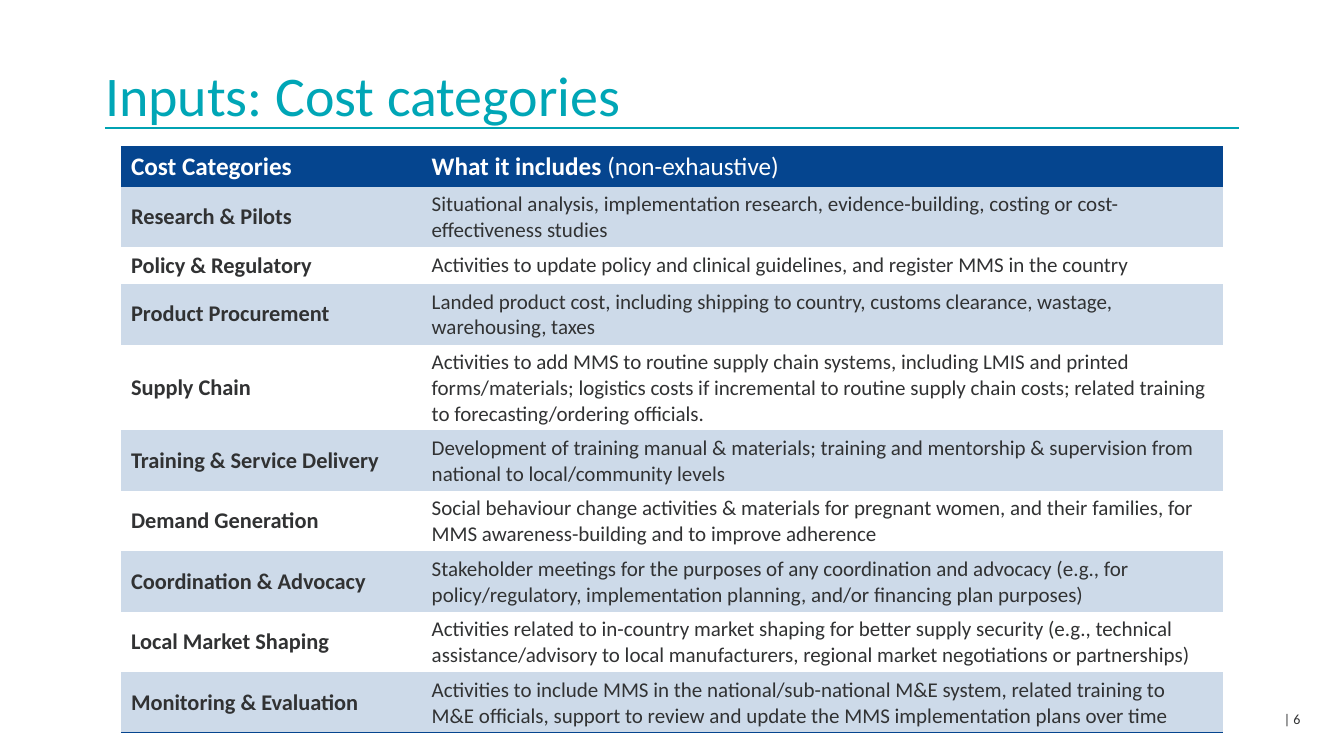
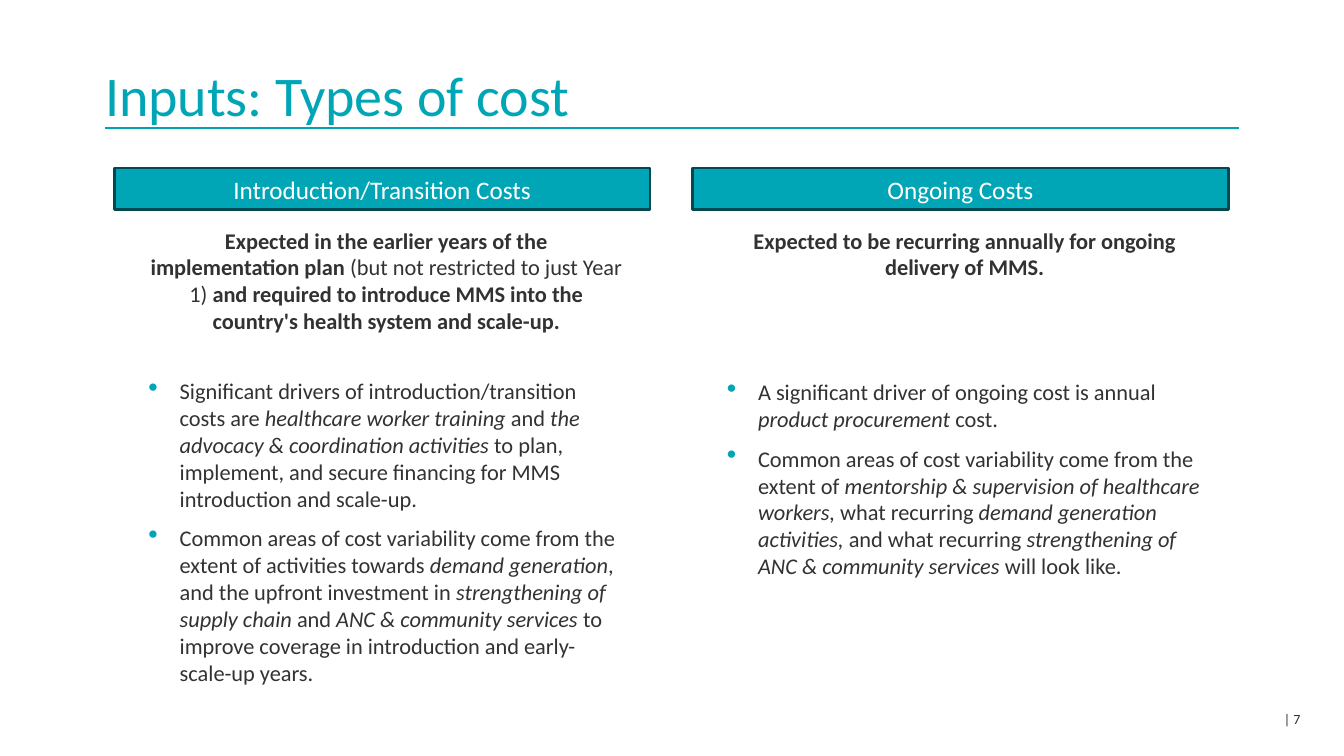
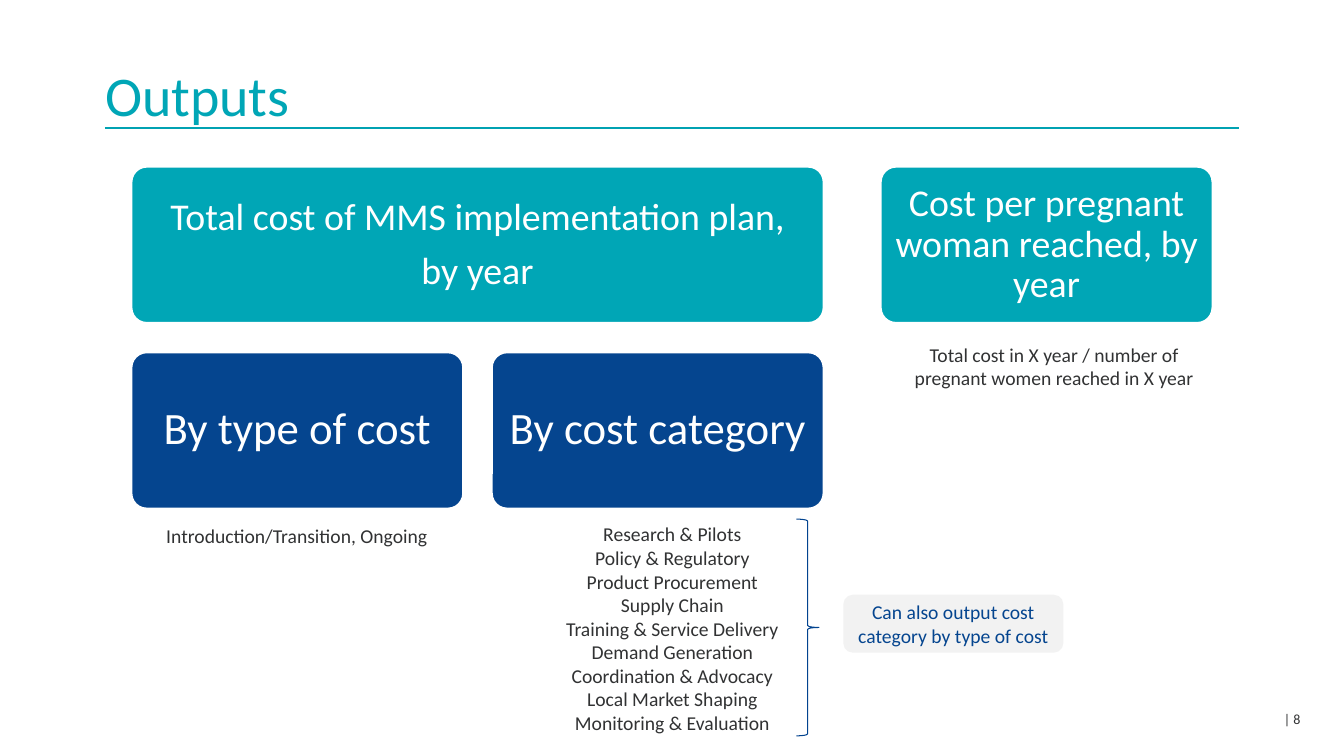
"""Build three slides on the inputs and outputs of a costing plan."""

from dataclasses import dataclass
from typing import NamedTuple

from lxml.etree import SubElement
from pptx import Presentation
from pptx.dml.color import RGBColor
from pptx.enum.shapes import MSO_CONNECTOR as Connector, MSO_SHAPE as Preset
from pptx.enum.text import MSO_ANCHOR as Anchor, PP_ALIGN as Align
from pptx.oxml.ns import qn
from pptx.util import Emu, Inches, Pt

COLUMNS, ROWS = 160, 90
CELL = Inches(1) // 12
FIRST_PAGE = 6
PLAIN_TABLE = "{2D5ABB26-0587-4C30-8999-92F81FD0307C}"


@dataclass(frozen=True)
class Theme:
    font: str = "Calibri"
    teal: str = "00A6B6"
    rule: str = "00A2B2"
    dark_teal: str = "004950"
    navy: str = "05458F"
    brace: str = "02438F"
    band: str = "CDDAE9"
    pale: str = "F2F2F2"
    ink: str = "313233"
    white: str = "FFFFFF"
    title: int = 40
    big_card: int = 32
    card: int = 27
    header: int = 18
    body: int = 16
    detail: int = 15
    caption: int = 14
    footer: int = 10


THEME = Theme()


class Box(NamedTuple):
    """A place in grid columns and rows."""

    left: float
    top: float
    width: float
    height: float

    def lengths(self) -> list[Emu]:
        return [grid(value) for value in self]


class Category(NamedTuple):
    name: str
    includes: str
    minimum_rows: float


class CostType(NamedTuple):
    name: str
    summary: str
    gap: float
    drivers: tuple[str, ...]


class Card(NamedTuple):
    column: int
    row: int
    span: int
    color: str
    size: int
    lines: tuple[str, ...]


class Caption(NamedTuple):
    box: Box
    lines: tuple[str, ...]


CATEGORIES = (
    Category("Research & Pilots", "Situational analysis, implementation research, evidence-building, costing or "
             "cost-effectiveness studies", 5.6),
    Category("Policy & Regulatory", "Activities to update policy and clinical guidelines, and register MMS in the "
             "country", 3.5),
    Category("Product Procurement", "Landed product cost, including shipping to country, customs clearance, wastage, "
             "warehousing, taxes", 5.6),
    Category("Supply Chain", "Activities to add MMS to routine supply chain systems, including LMIS and printed "
             "forms/materials; logistics costs if incremental to routine supply chain costs; related training to "
             "forecasting/ordering officials.", 8),
    Category("Training & Service Delivery", "Development of training manual & materials; training and mentorship & "
             "supervision from national to local/community levels", 5.6),
    Category("Demand Generation", "Social behaviour change activities & materials for pregnant women, and their "
             "families, for MMS awareness-building and to improve adherence", 5.6),
    Category("Coordination & Advocacy", "Stakeholder meetings for the purposes of any coordination and advocacy "
             "(e.g., for policy/regulatory, implementation planning, and/or financing plan purposes)", 5.6),
    Category("Local Market Shaping", "Activities related to in-country market shaping for better supply security "
             "(e.g., technical assistance/advisory to local manufacturers, regional market negotiations or "
             "partnerships)", 5.6),
    Category("Monitoring & Evaluation", "Activities to include MMS in the national/sub-national M&E system, related "
             "training to M&E officials, support to review and update the MMS implementation plans over time", 5.6),
)

COST_TYPES = (
    CostType(
        "Introduction/Transition Costs",
        "*Expected in the earlier years of the implementation plan *(but not restricted to just Year 1) "
        "*and required to introduce MMS into the country's health system and scale-up.*",
        31,
        ("Significant drivers of introduction/transition costs are *healthcare worker training *and *the advocacy & "
         "coordination activities* to plan, implement, and secure financing for MMS introduction and scale-up.",
         "Common areas of cost variability come from the extent of activities towards *demand generation*, and the "
         "upfront investment in *strengthening of supply chain *and* ANC & community services* to improve coverage "
         "in introduction and early-scale-up years."),
    ),
    CostType(
        "Ongoing Costs",
        "*Expected to be recurring annually for ongoing delivery of MMS.*",
        70,
        ("A significant driver of ongoing cost is annual *product procurement *cost.",
         "Common areas of cost variability come from the extent of *mentorship & supervision of healthcare workers, "
         "*what recurring *demand generation activities, *and what recurring *strengthening of ANC & community "
         "services* will look like."),
    ),
)

CARDS = (
    Card(0, 0, 2, THEME.teal, THEME.card, ("Total cost of MMS implementation plan,", "by year")),
    Card(0, 1, 1, THEME.navy, THEME.big_card, ("By type of cost",)),
    Card(1, 1, 1, THEME.navy, THEME.big_card, ("By cost category",)),
    Card(2, 0, 1, THEME.teal, THEME.card, ("Cost per pregnant woman reached, by year",)),
)

CAPTIONS = (
    Caption(Box(17.3, 61.8, 36.1, 4.1), ("Introduction/Transition, Ongoing",)),
    Caption(Box(106.5, 40.2, 38, 6.8), ("Total cost in X year / number of pregnant women reached in X year",)),
    Caption(Box(60.6, 61.6, 38.9, 29.5), tuple(category.name for category in CATEGORIES)),
)


def grid(count: float) -> Emu:
    """Turn a count of grid cells into a length."""
    return Emu(round(count * CELL))


def rgb(color: str) -> RGBColor:
    """Read a hexadecimal colour."""
    return RGBColor.from_string(color)


def add_bullet(paragraph) -> None:
    """Give a paragraph a hanging teal bullet."""
    properties = paragraph._p.get_or_add_pPr()
    indent = Inches(0.31)
    properties.set("marL", str(indent))
    properties.set("indent", str(-indent))
    color = SubElement(properties, qn("a:buClr"))
    SubElement(color, qn("a:srgbClr"), val=THEME.teal)
    SubElement(properties, qn("a:buSzPct"), val="125000")
    SubElement(properties, qn("a:buChar"), char="•")


def write(frame, text: str, *, size: int, color: str = THEME.ink, bold: bool = False, emphasis: str = "bold",
          align: Align = Align.LEFT, before: float = 0, after: float = 0, spacing: float = 1.0,
          bullet: bool = False) -> None:
    """Add a paragraph in which text between asterisks is emphasised."""
    first = frame.paragraphs[0]
    paragraph = frame.add_paragraph() if first.runs else first
    if bullet:
        add_bullet(paragraph)
    paragraph.alignment = align
    paragraph.space_before, paragraph.space_after = Pt(before), Pt(after)
    paragraph.line_spacing = spacing
    for index, piece in enumerate(text.split("*")):
        if not piece:
            continue
        run = paragraph.add_run()
        run.text = piece
        font = run.font
        font.name, font.size, font.bold = THEME.font, Pt(size), bold
        font.color.rgb = rgb(color)
        if index % 2:
            setattr(font, emphasis, True)


def add_text_box(slide, box: Box, anchor: Anchor = Anchor.TOP):
    """Add a wrapping text box and return its text frame."""
    frame = slide.shapes.add_textbox(*box.lengths()).text_frame
    frame.word_wrap = True
    frame.vertical_anchor = anchor
    return frame


def add_panel(slide, preset: Preset, box: Box, *, fill: str | None = None, line: str | None = None,
              width: float = 2, corner: float | None = None):
    """Add a flat preset shape and return its text frame."""
    shape = slide.shapes.add_shape(preset, *box.lengths())
    shape.shadow.inherit = False
    if corner is not None:
        shape.adjustments[0] = corner
    if fill:
        shape.fill.solid()
        shape.fill.fore_color.rgb = rgb(fill)
    else:
        shape.fill.background()
    if line:
        shape.line.color.rgb = rgb(line)
        shape.line.width = Pt(width)
    else:
        shape.line.fill.background()
    shape.text_frame.word_wrap = True
    shape.text_frame.vertical_anchor = Anchor.MIDDLE
    return shape.text_frame


def add_page(presentation, title: str):
    """Add a slide with its title, rule and page number."""
    slide = presentation.slides.add_slide(presentation.slide_layouts[6])
    page = FIRST_PAGE + len(presentation.slides) - 1
    footer = add_text_box(slide, Box(119.5, 82.4, 36.5, 4.8), Anchor.BOTTOM)
    write(footer, f"| {page}", size=THEME.footer, align=Align.RIGHT)
    rule = slide.shapes.add_connector(Connector.STRAIGHT, grid(12.5), grid(15.25), grid(147.5), grid(15.25))
    rule.line.color.rgb = rgb(THEME.rule)
    rule.line.width = Pt(1)
    SubElement(rule._element.spPr, qn("a:effectLst"))
    heading = add_text_box(slide, Box(12.5, 3.6, 135, 11.65), Anchor.BOTTOM)
    heading.margin_left = heading.margin_bottom = 0
    write(heading, title, size=THEME.title, color=THEME.teal)
    return slide


def format_cell(cell, text: str, *, fill: str | None, edges: tuple[str, ...] = (),
                anchor: Anchor = Anchor.MIDDLE, **style) -> None:
    """Set the borders, fill and text of a table cell."""
    properties = cell._tc.get_or_add_tcPr()
    for edge in edges:
        border = SubElement(properties, qn(f"a:{edge}"), w=str(Pt(1)))
        paint = SubElement(border, qn("a:solidFill"))
        SubElement(paint, qn("a:srgbClr"), val=THEME.navy)
    if fill:
        cell.fill.solid()
        cell.fill.fore_color.rgb = rgb(fill)
    else:
        cell.fill.background()
    cell.vertical_anchor = anchor
    write(cell.text_frame, text, **style)


def build_categories(presentation) -> None:
    """Draw the table of cost categories."""
    slide = add_page(presentation, "Inputs: Cost categories")
    widths = (35.8, 95.4)
    heights = (3.7, *(category.minimum_rows for category in CATEGORIES))
    box = Box(14.4, 17.4, sum(widths), sum(heights))
    table = slide.shapes.add_table(len(heights), len(widths), *box.lengths()).table
    table._tbl.tblPr.find(qn("a:tableStyleId")).text = PLAIN_TABLE
    table.first_row = table.horz_banding = False
    for column, width in zip(table.columns, widths):
        column.width = grid(width)
    for row, height in zip(table.rows, heights):
        row.height = grid(height)
    for column, heading in enumerate(("*Cost Categories*", "*What it includes *(non-exhaustive)")):
        format_cell(table.cell(0, column), heading, fill=THEME.navy, edges=("lnT", "lnB"), anchor=Anchor.TOP,
                    size=THEME.header, color=THEME.white)
    for row, category in enumerate(CATEGORIES, start=1):
        look = dict(fill=THEME.band if row % 2 else None, edges=("lnB",) if row == len(CATEGORIES) else ())
        format_cell(table.cell(row, 0), category.name, size=THEME.body, bold=True, **look)
        format_cell(table.cell(row, 1), category.includes, size=THEME.detail, **look)


def build_cost_types(presentation) -> None:
    """Draw one column for each type of cost."""
    slide = add_page(presentation, "Inputs: Types of cost")
    for index, cost in enumerate(COST_TYPES):
        left = 13.6 + 68.85 * index
        header = add_panel(slide, Preset.RECTANGLE, Box(left, 20, 63.8, 5), fill=THEME.teal, line=THEME.dark_teal)
        write(header, cost.name, size=THEME.header, color=THEME.white, align=Align.CENTER)
        body = add_text_box(slide, Box(left + 2.9, 26.4, 59, 54.6))
        write(body, cost.summary, size=THEME.body, align=Align.CENTER)
        for position, driver in enumerate(cost.drivers):
            write(body, driver, size=THEME.body, emphasis="italic", bullet=True, after=6,
                  before=3 if position else cost.gap)


def build_outputs(presentation) -> None:
    """Draw the output cards, their captions and the callout."""
    slide = add_page(presentation, "Outputs")
    lefts = (15.6, 58.5, 104.8)
    width, height, row_pitch = 39.6, 18.7, 22.1
    for card in CARDS:
        left = lefts[card.column]
        right = lefts[card.column + card.span - 1] + width
        box = Box(left, 19.8 + row_pitch * card.row, right - left, height)
        frame = add_panel(slide, Preset.ROUNDED_RECTANGLE, box, fill=card.color, line=THEME.white, corner=0.1)
        for index, line in enumerate(card.lines):
            write(frame, line, size=card.size, color=THEME.white, align=Align.CENTER, spacing=0.9,
                  before=9.45 if index else 0)
    for caption in CAPTIONS:
        frame = add_text_box(slide, caption.box)
        for line in caption.lines:
            write(frame, line, size=THEME.caption, align=Align.CENTER)
    callout = add_panel(slide, Preset.ROUNDED_RECTANGLE, Box(100.4, 70.8, 26.2, 6.9), fill=THEME.pale)
    write(callout, "Can also output cost category by type of cost", size=THEME.caption, color=THEME.navy,
          align=Align.CENTER)
    add_panel(slide, Preset.RIGHT_BRACE, Box(94.8, 61.8, 2.7, 25.8), line=THEME.brace, width=0.75)


def main() -> None:
    """Build and save the presentation."""
    presentation = Presentation()
    presentation.slide_width, presentation.slide_height = grid(COLUMNS), grid(ROWS)
    build_categories(presentation)
    build_cost_types(presentation)
    build_outputs(presentation)
    presentation.save("out.pptx")


if __name__ == "__main__":
    main()
